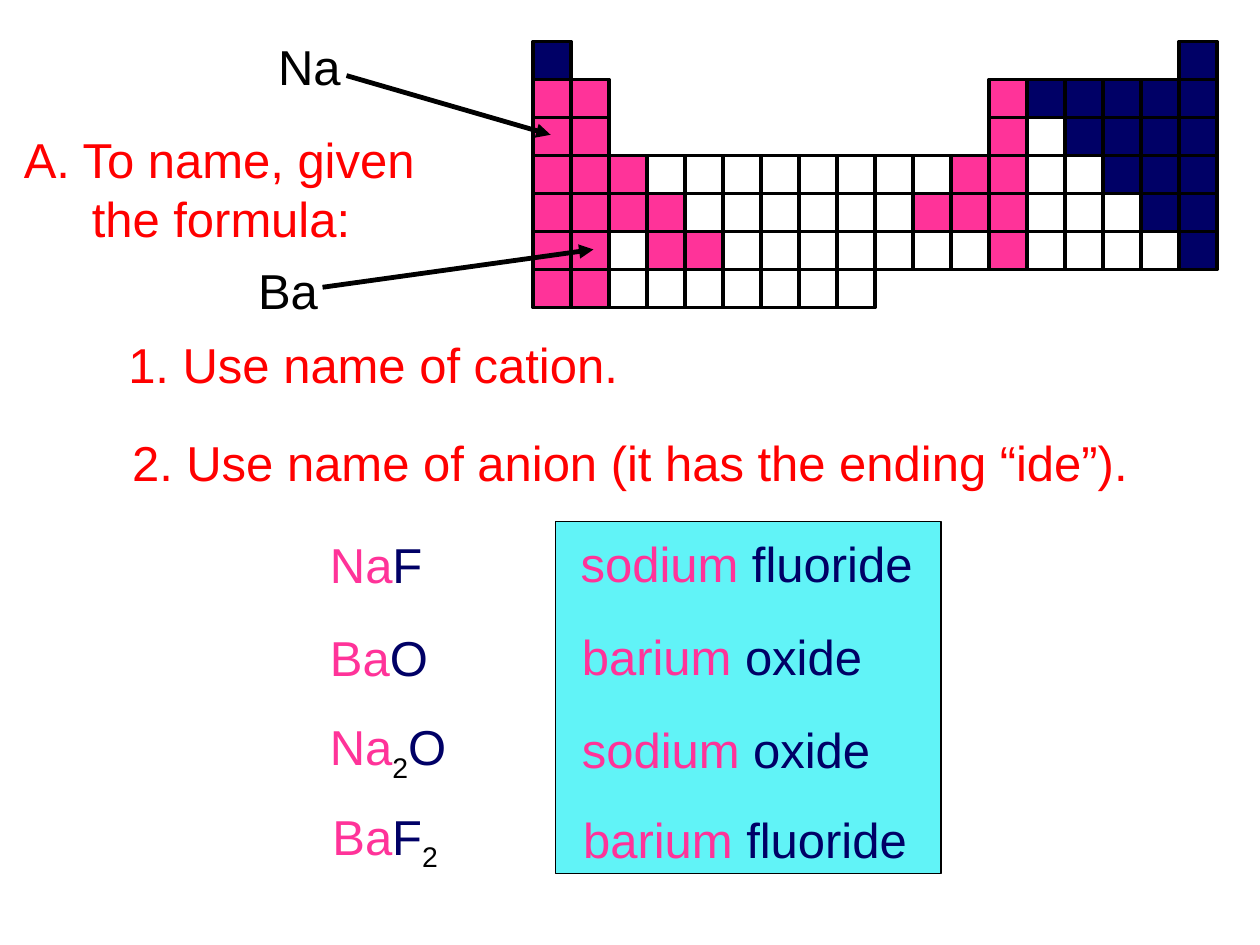
from pptx import Presentation
from pptx.dml.color import RGBColor
from pptx.enum.shapes import MSO_CONNECTOR, MSO_SHAPE
from pptx.enum.text import MSO_ANCHOR, MSO_AUTO_SIZE, PP_ALIGN
from pptx.oxml.ns import qn
from pptx.util import Inches, Pt
from lxml.etree import SubElement

THEME = {
    "font": "Arial", "size": 28,
    "red": "FF0000", "pink": "FF3399", "navy": "000066",
    "black": "000000", "cyan": "61F3F7",
    "frame": 0.75, "grid": 2, "arrow": 2.75,
}
PANEL = (4.41, 4.14, 3.06, 2.79)
TITLE = ["A. To name, given", "the formula:"]
RULES = [
    ("2. Use name of anion (it has the ending “ide”).", (0.95, 3.38, 8.43)),
    ("1. Use name of cation.", (0.92, 2.6, 4.14)),
]
PAIRS = [
    ([("Na", "pink"), ("F", "navy")], (2.52, 4.19, 1.05),
     [("sodium ", "pink"), ("fluoride", "navy")], (4.51, 4.18, 2.92)),
    ([("Ba", "pink"), ("O", "navy")], (2.52, 4.93, 1.09),
     [("barium ", "pink"), ("oxide", "navy")], (4.52, 4.92, 3.04)),
    ([("Na", "pink"), ("2", "black"), ("O", "navy")], (2.52, 5.67, 1.26),
     [("sodium", "pink"), (" oxide", "navy")], (4.52, 5.66, 2.53)),
    ([("Ba", "pink"), ("F", "navy"), ("2", "black")], (2.54, 6.38, 1.17),
     [("barium", "pink"), (" fluoride", "navy")], (4.53, 6.37, 2.83)),
]
CELLS = [
    "N                N",
    "PP          PNNNNN",
    "PP          P-NNNN",
    "PPP--------PP--NNN",
    "PPPP------PPP---NN",
    "PP-PP-------P----N",
    "PP-------",
]
FILLS = {"P": "pink", "N": "navy", "-": None}
GRID = (4.23, 0.33, 5.43)
CALLS = [
    ("Na", (2.08, 0.24, 0.75), (2.75, 0.6, 4.37, 1.07)),
    ("Ba", (1.91, 2.02, 0.75), (2.56, 2.28, 4.71, 1.98)),
]


def tint(name):
    return RGBColor.from_string(THEME[name])


def add_rect(home, box, fill, width):
    rect = home.add_shape(MSO_SHAPE.RECTANGLE, *map(Inches, box))
    rect.shadow.inherit = False
    if fill:
        rect.fill.solid()
        rect.fill.fore_color.rgb = tint(fill)
    else:
        rect.fill.background()
    rect.line.color.rgb = tint("black")
    rect.line.width = Pt(width)


def add_text(home, lines, spot, high=0.57, wrap=True, mid=True):
    box = home.add_textbox(*map(Inches, (*spot, high)))
    frame = box.text_frame
    frame.word_wrap = wrap
    frame.auto_size = MSO_AUTO_SIZE.SHAPE_TO_FIT_TEXT
    frame.vertical_anchor = MSO_ANCHOR.MIDDLE if mid else MSO_ANCHOR.TOP
    for i, runs in enumerate(lines):
        para = frame.add_paragraph() if i else frame.paragraphs[0]
        para.font.name, para.font.size = THEME["font"], Pt(THEME["size"])
        if len(runs) == 1:
            para.font.color.rgb = tint(runs[0][1])
        for text, hue in runs:
            run = para.add_run()
            run.text = text
            if len(runs) > 1:
                run.font.color.rgb = tint(hue)
            if text.isdigit():
                run.font._element.set("baseline", "-25000")
    return frame.paragraphs


def add_arrow(home, ends):
    arrow = home.add_connector(MSO_CONNECTOR.STRAIGHT, *map(Inches, ends))
    arrow.line.color.rgb = tint("black")
    arrow.line.width = Pt(THEME["arrow"])
    SubElement(arrow.line._get_or_add_ln(), qn("a:tailEnd"), type="triangle")
    SubElement(arrow._element.spPr, qn("a:effectLst"))


def add_grid(home):
    left, top, wide = GRID
    side = wide / len(CELLS[0])
    for row, marks in enumerate(CELLS):
        for col, mark in enumerate(marks):
            if mark in FILLS:
                box = (left + col * side, top + row * side, side, side)
                add_rect(home, box, FILLS[mark], THEME["grid"])


def main():
    """Build the slide on naming ionic compounds from their formulas."""
    deck = Presentation()
    deck.slide_width, deck.slide_height = Inches(10), Inches(7.5)
    shapes = deck.slides.add_slide(deck.slide_layouts[6]).shapes

    add_rect(shapes, PANEL, "cyan", THEME["frame"])
    title = add_text(shapes, [[(line, "red")] for line in TITLE],
                     (0.09, 0.98, 3.81), 1.03)
    title[1]._p.get_or_add_pPr().set("marL", str(Inches(0.54)))
    for text, spot in RULES:
        add_text(shapes, [[(text, "red")]], spot, wrap=False)
    for sign, spot, name, place in PAIRS:
        add_text(shapes, [sign], spot, wrap=False)
        add_text(shapes, [name], place)

    add_grid(shapes.add_group_shape().shapes)
    for text, spot, ends in CALLS:
        group = shapes.add_group_shape().shapes
        add_arrow(group, ends)
        label = add_text(group, [[(text, "black")]], spot, mid=False)
        label[0].alignment = PP_ALIGN.CENTER

    deck.save("out.pptx")


if __name__ == "__main__":
    main()
